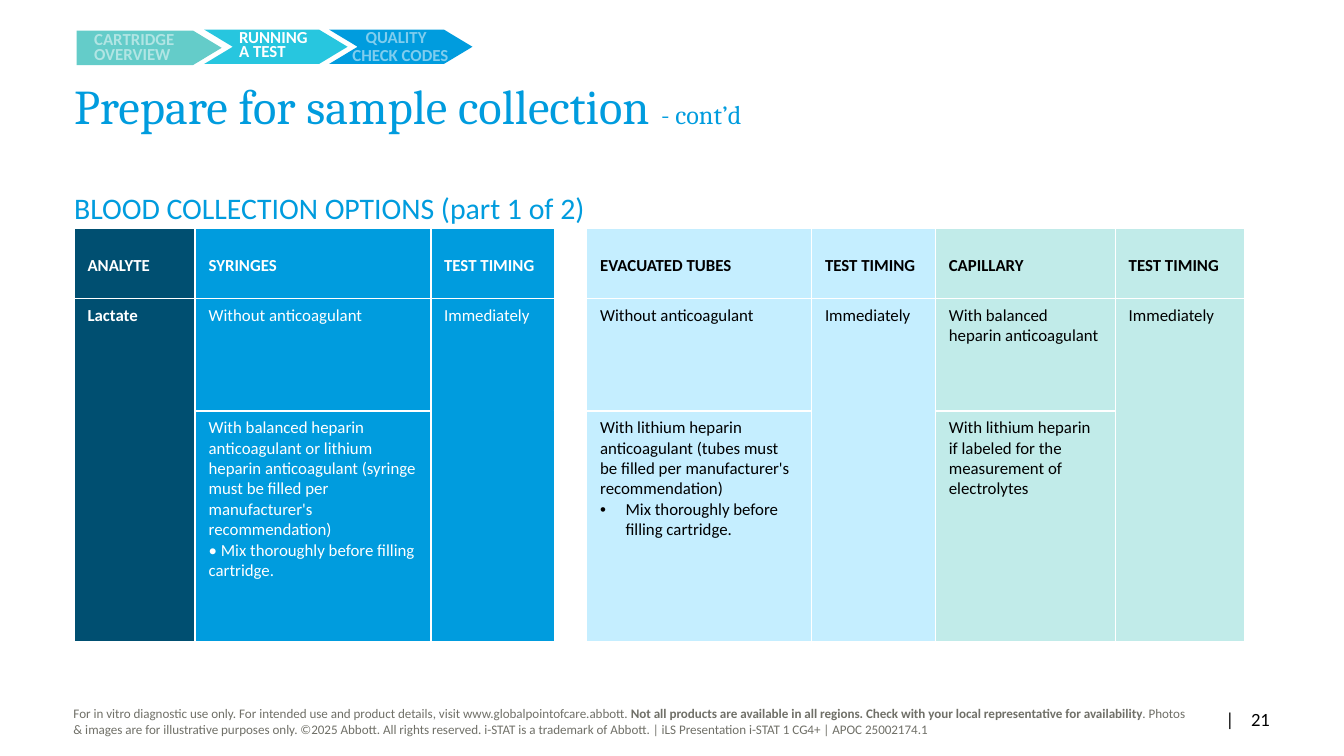
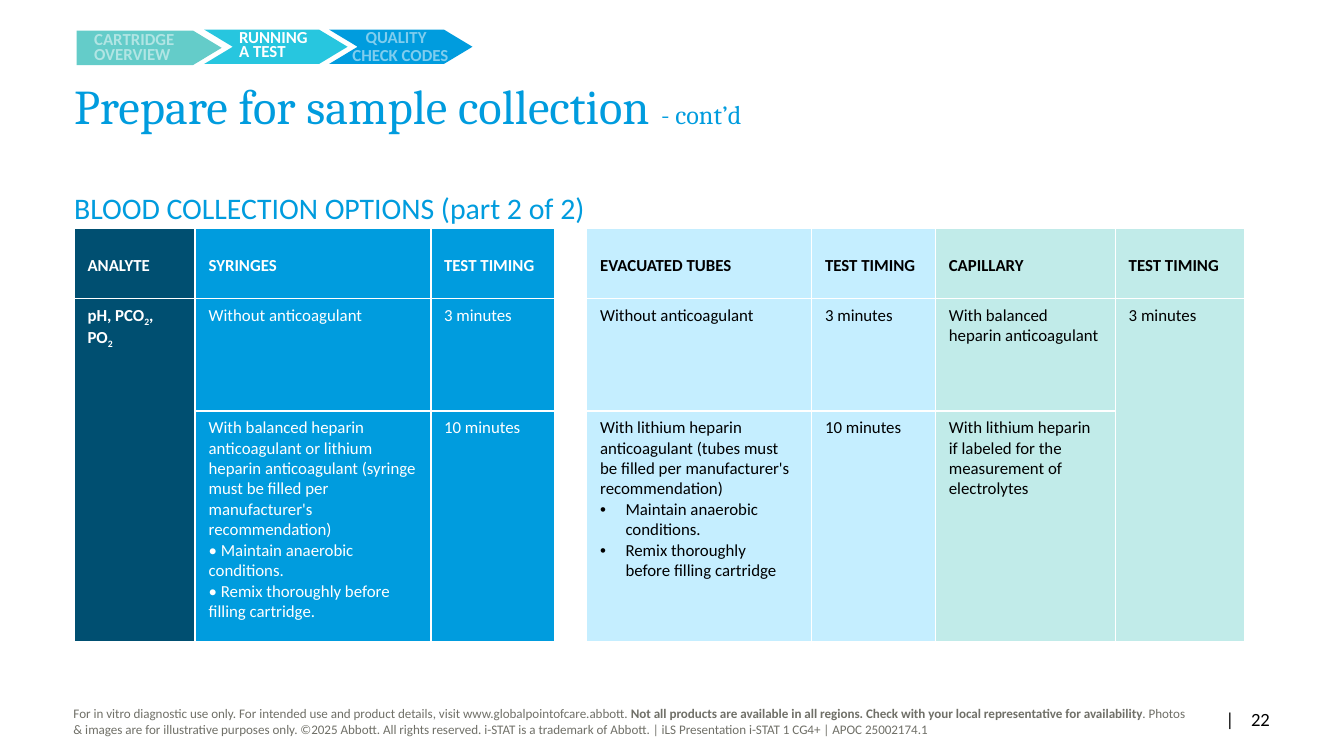
from dataclasses import dataclass

from lxml.etree import SubElement
from pptx import Presentation
from pptx.dml.color import RGBColor
from pptx.enum.shapes import MSO_SHAPE as Preset
from pptx.enum.text import MSO_ANCHOR as Anchor, MSO_AUTO_SIZE as AutoSize, PP_ALIGN as Align
from pptx.oxml.ns import qn
from pptx.util import Cm, Pt


@dataclass(frozen=True)
class Theme:
    """Colours, fonts and type sizes of the deck."""
    heading: str = "Cambria"
    text: str = "Calibri"
    white: str = "FFFFFF"
    black: str = "000000"
    grey: str = "707068"
    navy: str = "004F71"
    blue: str = "009CDE"
    cyan: str = "27C6DF"
    teal: str = "64CCC9"
    pale_blue: str = "C5EEFF"
    pale_teal: str = "C1EBE9"
    title_size: float = 26
    suffix_size: float = 14
    subtitle_size: float = 16
    number_size: float = 10
    table_size: float = 9
    step_size: float = 9
    legal_size: float = 7


@dataclass(frozen=True)
class Box:
    """A region of the slide in centimetres."""
    left: float
    top: float
    width: float
    height: float

    def inner(self, dx, dy, width, height):
        """Return a box offset from this one's corner."""
        return Box(self.left + dx, self.top + dy, width, height)

    def lengths(self):
        """Return left, top, width and height as lengths."""
        return [Cm(v) for v in (self.left, self.top, self.width, self.height)]


class Bulleted(str):
    """A table line with a hanging bullet."""


THEME = Theme()
STEPS_BOX = Box(1.45, 0.56, 7.5, 0.67)
TITLE_BOX = Box(1.4, 1.57, 22.6, 1.09)
SUBTITLE_BOX = Box(1.4, 3.58, 11.07, 9.45)
TABLE_BOX = Box(1.4, 4.32, 21.59, 7.82)
LEGAL_BOX = Box(1.14, 13.21, 21.54, 0.86)
NUMBER_BOX = Box(22.68, 13.21, 1.57, 0.76)

COLUMNS = [
    ("ANALYTE", 2.29, THEME.navy, THEME.white),
    ("SYRINGES", 4.45, THEME.blue, THEME.white),
    ("TEST TIMING", 2.34, THEME.blue, THEME.white),
    ("", 0.08, THEME.white, THEME.black),
    ("EVACUATED TUBES", 4.25, THEME.pale_blue, THEME.black),
    ("TEST TIMING", 2.34, THEME.pale_blue, THEME.black),
    ("CAPILLARY", 3.4, THEME.pale_teal, THEME.black),
    ("TEST TIMING", 2.44, THEME.pale_teal, THEME.black),
]
ROW_HEIGHTS = [1.32, 2.13, 4.37]

PLAIN = "Without anticoagulant"
SYRINGE = ("With balanced heparin anticoagulant or lithium heparin anticoagulant "
           "(syringe must be filled per manufacturer's recommendation)")
TUBE = ("With lithium heparin\nanticoagulant (tubes must\n"
        "be filled per manufacturer's recommendation)")
BALANCED = ["With balanced", "heparin anticoagulant"]
LITHIUM = ["With lithium heparin", "if labeled for the", "measurement of", "electrolytes"]

LACTATE = [
    [["Lactate"], [PLAIN], ["Immediately"], [], [PLAIN], ["Immediately"],
     BALANCED, ["Immediately"]],
    [None, [SYRINGE, "• Mix thoroughly before filling cartridge."], None, [],
     [TUBE, Bulleted("Mix thoroughly before filling cartridge.")], None, LITHIUM, None],
]
BLOOD_GASES = [
    [["pH, PCO₂, PO₂"], [PLAIN], ["3 minutes"], [], [PLAIN], ["3 minutes"],
     BALANCED, ["3 minutes"]],
    [None,
     [SYRINGE, "• Maintain anaerobic conditions.",
      "• Remix thoroughly before filling cartridge."],
     ["10 minutes"], [],
     [TUBE, Bulleted("Maintain anaerobic conditions."),
      Bulleted("Remix thoroughly\nbefore filling cartridge")],
     ["10 minutes"], LITHIUM, None],
]


def style_font(paragraph, size, color, bold=False, face=THEME.text):
    """Set the font that all runs of a paragraph share."""
    font = paragraph.font
    font.name, font.size, font.bold = face, Pt(size), bold
    font.color.rgb = RGBColor.from_string(color)
    return font


def set_frame(frame, insets, anchor=Anchor.TOP):
    """Make a text frame wrap, with fixed insets in centimetres."""
    frame.word_wrap, frame.auto_size = True, AutoSize.NONE
    frame.vertical_anchor = anchor
    (frame.margin_left, frame.margin_top,
     frame.margin_right, frame.margin_bottom) = [Cm(v) for v in insets]
    return frame


def add_text(slide, box, insets, anchor=Anchor.TOP):
    """Add a text box and return its frame."""
    return set_frame(slide.shapes.add_textbox(*box.lengths()).text_frame, insets, anchor)


def place_placeholder(placeholder, box):
    """Move a placeholder into its box and return its first paragraph."""
    placeholder.left, placeholder.top, placeholder.width, placeholder.height = box.lengths()
    paragraph = set_frame(placeholder.text_frame, (0, 0, 0.25, 0.13)).paragraphs[0]
    paragraph.alignment = Align.LEFT
    return paragraph


def indent(paragraph, margin, hanging, bullet=None):
    """Set a paragraph's indent in centimetres and its bullet."""
    props = paragraph._p.get_or_add_pPr()
    props.set("marL", str(Cm(margin)))
    props.set("indent", str(Cm(-hanging)))
    if bullet:
        SubElement(props, qn("a:buFont"), typeface="Arial")
        SubElement(props, qn("a:buChar"), char=bullet)
    else:
        SubElement(props, qn("a:buNone"))


def add_steps(slide, box):
    """Draw the chapter steps with the current one in full white."""
    arrows = [
        (Preset.PENTAGON, box.inner(0, 0.02, 2.74, 0.65), THEME.teal),
        (Preset.CHEVRON, box.inner(2.41, 0, 2.71, 0.65), THEME.cyan),
        (Preset.CHEVRON, box.inner(4.77, 0, 2.71, 0.65), THEME.blue),
    ]
    for preset, place, color in arrows:
        arrow = slide.shapes.add_shape(preset, *place.lengths())
        arrow.adjustments[0] = 0.83
        arrow.shadow.inherit = False
        arrow.fill.solid()
        arrow.fill.fore_color.rgb = RGBColor.from_string(color)
        arrow.line.fill.background()

    labels = [
        (["CARTRIDGE\nOVERVIEW"], box.inner(0.3, 0.05, 1.8, 0.61), 8, False),
        (["RUNNING", "A TEST"], box.inner(3.02, 0.08, 1.96, 0.58), 5, True),
        (["CHECK CODES"], box.inner(5.18, 0.35, 1.88, 0.33), 8, False),
        (["QUALITY"], box.inner(5.43, 0.02, 1.7, 0.33), 8, False),
    ]
    for lines, place, leading, current in labels:
        frame = add_text(slide, place, (0, 0.08 if current else 0.03, 0, 0))
        for i, line in enumerate(lines):
            paragraph = frame.add_paragraph() if i else frame.paragraphs[0]
            paragraph.text = line
            paragraph.line_spacing = Pt(leading)
            if i:
                paragraph.space_before = Pt(2.5)
            indent(paragraph, *((0.23, 0.18) if current else (0.03, 0)))
            style_font(paragraph, THEME.step_size, THEME.white, bold=True)
            if not current:
                color = paragraph._p.pPr.find(".//" + qn("a:srgbClr"))
                SubElement(color, qn("a:alpha"), val="50000")


def add_title(slide, box):
    """Fill the title placeholder, with a smaller suffix."""
    paragraph = place_placeholder(slide.shapes.title, box)
    paragraph.line_spacing = 0.9
    style_font(paragraph, THEME.title_size, THEME.blue, face=THEME.heading)
    paragraph.add_run().text = "Prepare for sample collection "
    suffix = paragraph.add_run()
    suffix.text = "- cont’d"
    suffix.font.size = Pt(THEME.suffix_size)


def add_subtitle(slide, box, part):
    """Fill the body placeholder with the table's heading."""
    paragraph = place_placeholder(slide.placeholders[1], box)
    paragraph.text = f"BLOOD COLLECTION OPTIONS (part {part} of 2)"
    paragraph.space_before = Pt(0)
    indent(paragraph, 0, 0)
    style_font(paragraph, THEME.subtitle_size, THEME.blue)


def write_line(paragraph, line):
    """Write a table line, lowering each subscript two."""
    if "₂" not in line:
        paragraph.text = line
        return
    for i, piece in enumerate(line.split("₂")):
        if i:
            subscript = paragraph.add_run()
            subscript.text = "2"
            subscript.font._element.set("baseline", "-25000")
        if piece:
            paragraph.add_run().text = piece


def fill_cell(cell, lines, fill, color, bold, header):
    """Colour a table cell and write its lines."""
    cell.fill.solid()
    cell.fill.fore_color.rgb = RGBColor.from_string(fill)
    cell.vertical_anchor = Anchor.MIDDLE if header else Anchor.TOP
    frame = cell.text_frame
    for i, line in enumerate(lines):
        paragraph = frame.add_paragraph() if i else frame.paragraphs[0]
        write_line(paragraph, line)
        if header:
            paragraph.line_spacing = Pt(12.9)
        if isinstance(line, Bulleted):
            indent(paragraph, 0.48, 0.48, "•")
        style_font(paragraph, THEME.table_size, color, bold)


def add_options_table(slide, box, body):
    """Build the collection table, merging cells marked None upwards."""
    rows = [[[heading] for heading, *_ in COLUMNS], *body]
    table = slide.shapes.add_table(len(rows), len(COLUMNS), *box.lengths()).table
    for row, height in zip(table.rows, ROW_HEIGHTS):
        row.height = Cm(height)
    for c, (_, width, fill, color) in enumerate(COLUMNS):
        table.columns[c].width = Cm(width)
        for r, row in enumerate(rows):
            if row[c] is None:
                table.cell(r - 1, c).merge(table.cell(r, c))
            else:
                fill_cell(table.cell(r, c), row[c], fill, color, r == 0 or c == 0, r == 0)


def add_footer(slide, legal_box, number_box, number):
    """Write the legal notice and the page number."""
    notice = add_text(slide, legal_box, (0.25, 0.13, 0.25, 0.13)).paragraphs[0]
    style_font(notice, THEME.legal_size, THEME.grey)
    for words, bold in [
        ("For in vitro diagnostic use only. For intended use and product details, "
         "visit www.globalpointofcare.abbott. ", False),
        ("Not all products are available in all regions. Check with your local "
         "representative for availability", True),
        (". Photos & images are for illustrative purposes only. ©2025 Abbott. "
         "All rights reserved. i-STAT is a trademark of Abbott. | "
         "iLS Presentation i-STAT 1 CG4+ | APOC 25002174.1", False),
    ]:
        run = notice.add_run()
        run.text, run.font.bold = words, bold

    page = add_text(slide, number_box, (0, 0.13, 0.25, 0.13), Anchor.MIDDLE).paragraphs[0]
    page.alignment = Align.RIGHT
    style_font(page, THEME.number_size, THEME.black)
    bar = page.add_run()
    bar.text = "|"
    bar.font._element.set("spc", "900")
    page.add_run().text = str(number)


def add_options_slide(deck, part, number, body):
    """Add one slide of blood collection options."""
    slide = deck.slides.add_slide(deck.slide_layouts[1])
    add_steps(slide, STEPS_BOX)
    add_title(slide, TITLE_BOX)
    add_subtitle(slide, SUBTITLE_BOX, part)
    add_options_table(slide, TABLE_BOX, body)
    add_footer(slide, LEGAL_BOX, NUMBER_BOX, number)


def main():
    """Build and save the deck."""
    deck = Presentation()
    deck.slide_width, deck.slide_height = Cm(25.4), Cm(14.29)
    for part, body in enumerate([LACTATE, BLOOD_GASES], start=1):
        add_options_slide(deck, part, 20 + part, body)
    deck.save("out.pptx")


if __name__ == "__main__":
    main()
